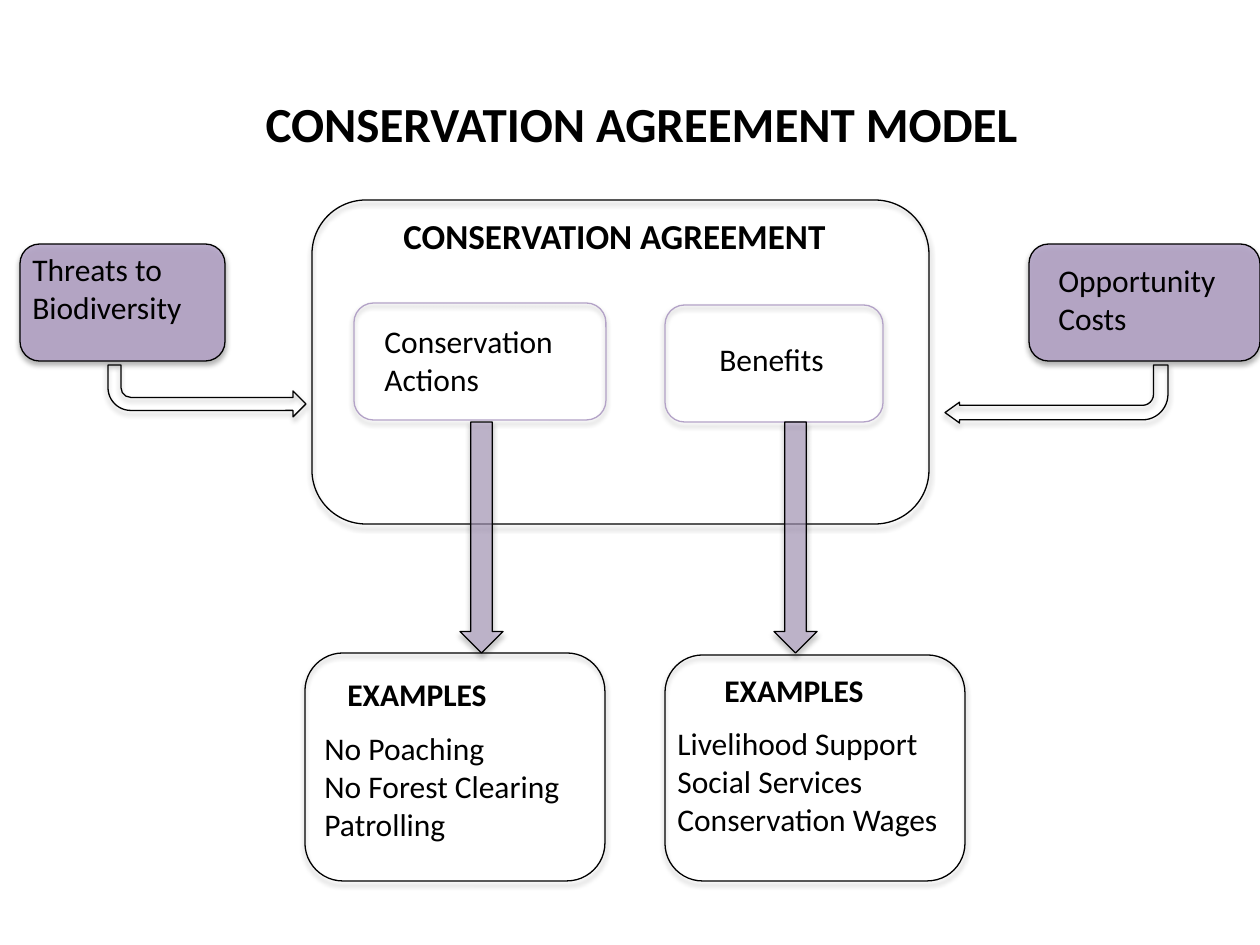
from typing import NamedTuple, Optional

from lxml import etree
from pptx import Presentation
from pptx import util as u
from pptx.dml.color import RGBColor
from pptx.enum import shapes, text
from pptx.oxml import ns

PX = u.Inches(1) / 126
BLACK, LILAC = "000000", "B3A2C7"
KIND = shapes.MSO_SHAPE


class Box(NamedTuple):
    x: int
    y: int
    w: int
    h: int


class Figure(NamedTuple):
    kind: shapes.MSO_SHAPE
    box: Box
    line: str = BLACK
    alpha: Optional[int] = None
    flip: bool = False
    rotation: int = 0
    adjustments: tuple = ()


class Label(NamedTuple):
    box: Box
    lines: tuple
    size: int = 18
    bold: bool = False
    wrap: bool = True


def emu(box: Box) -> list:
    return [u.Emu(round(v * PX)) for v in box]


def rgb(color: str) -> RGBColor:
    return RGBColor.from_string(color)


def sub(parent, tag: str, **attrs):
    return etree.SubElement(parent, ns.qn(tag), {k: str(v) for k, v in attrs.items()})


def add_shadow(sp) -> None:
    sp.shadow.inherit = False
    effects = sp.element.spPr.find(ns.qn("a:effectLst"))
    shadow = sub(effects, "a:outerShdw", blurRad=u.Pt(3.1), dist=u.Pt(1.8),
                 dir=90 * 60000, rotWithShape=0)
    sub(sub(shadow, "a:srgbClr", val=BLACK), "a:alpha", val=35000)


def draw_figure(s, fig: Figure) -> None:
    sp = s.shapes.add_shape(fig.kind, *emu(fig.box))
    for i, value in enumerate(fig.adjustments):
        sp.adjustments[i] = value
    sp.rotation = fig.rotation
    if fig.flip:
        sp.element.spPr.find(ns.qn("a:xfrm")).set("flipV", "1")
    if fig.alpha is None:
        sp.fill.background()
    else:
        sp.fill.solid()
        sp.fill.fore_color.rgb = rgb(LILAC)
        fill = sp.element.spPr.find(ns.qn("a:solidFill"))
        sub(fill[0], "a:alpha", val=fig.alpha * 1000)
    sp.line.color.rgb = rgb(fig.line)
    sp.line.width = u.Pt(0.75)
    add_shadow(sp)


def write(tf, lines: tuple, *, size: int = 18, bold: bool = False,
          wrap: bool = True, color: str = BLACK) -> None:
    tf.word_wrap = wrap
    tf.auto_size = text.MSO_AUTO_SIZE.NONE
    tf.vertical_anchor = text.MSO_ANCHOR.TOP
    for i, line in enumerate(lines):
        p = tf.add_paragraph() if i else tf.paragraphs[0]
        p.alignment = text.PP_ALIGN.LEFT
        r = p.add_run()
        r.text = line
        r.font.name = "Calibri"
        r.font.size = u.Pt(size)
        r.font.bold = bold
        r.font.color.rgb = rgb(color)


def draw_label(s, label: Label) -> None:
    sp = s.shapes.add_textbox(*emu(label.box))
    write(sp.text_frame, label.lines, size=label.size, bold=label.bold, wrap=label.wrap)


FIGURES = [
    Figure(KIND.ROUNDED_RECTANGLE, Box(20, 244, 205, 117), alpha=84),
    Figure(KIND.ROUNDED_RECTANGLE, Box(312, 200, 617, 324)),
    Figure(KIND.ROUNDED_RECTANGLE, Box(665, 305, 218, 117), line=LILAC),
    Figure(KIND.ROUNDED_RECTANGLE, Box(354, 303, 252, 117), line=LILAC),
    Figure(KIND.ROUNDED_RECTANGLE, Box(1029, 244, 231, 117), alpha=84),
    Figure(KIND.ROUNDED_RECTANGLE, Box(305, 653, 300, 228)),
    Figure(KIND.ROUNDED_RECTANGLE, Box(665, 655, 300, 226)),
    Figure(KIND.DOWN_ARROW, Box(460, 422, 43, 231), alpha=59),
    Figure(KIND.DOWN_ARROW, Box(774, 422, 43, 231), alpha=59),
    Figure(KIND.BENT_ARROW, Box(945, 365, 223, 58), rotation=180,
           adjustments=(0.25, 0.18, 0.25, 0.44)),
    Figure(KIND.BENT_ARROW, Box(108, 365, 198, 52), flip=True),
]

LABELS = [
    Label(Box(20, 244, 262, 100), ("Threats to Biodiversity",)),
    Label(Box(372, 316, 233, 100), ("Conservation Actions",)),
    Label(Box(707, 334, 135, 57), ("Benefits",), wrap=False),
    Label(Box(1046, 255, 199, 100), ("Opportunity Costs",)),
    Label(Box(391, 208, 470, 62), ("CONSERVATION AGREEMENT",), size=20, bold=True, wrap=False),
    Label(Box(312, 723, 271, 142), ("No Poaching", "No Forest Clearing", "Patrolling"), wrap=False),
    Label(Box(665, 718, 300, 142), ("Livelihood Support", "Social Services", "Conservation Wages")),
    Label(Box(335, 669, 166, 50), ("EXAMPLES",), bold=True, wrap=False),
    Label(Box(712, 665, 166, 50), ("EXAMPLES",), bold=True, wrap=False),
]


def main() -> None:
    prs = Presentation()
    prs.slide_width, prs.slide_height = u.Inches(10), u.Inches(7.5)
    s = prs.slides.add_slide(prs.slide_layouts[5])
    title = s.shapes.title
    title.left, title.top, title.width, title.height = emu(Box(253, 87, 794, 72))
    write(title.text_frame, ("CONSERVATION AGREEMENT MODEL",), size=28, bold=True)
    for fig in FIGURES:
        draw_figure(s, fig)
    for label in LABELS:
        draw_label(s, label)
    prs.save("out.pptx")


if __name__ == "__main__":
    main()
